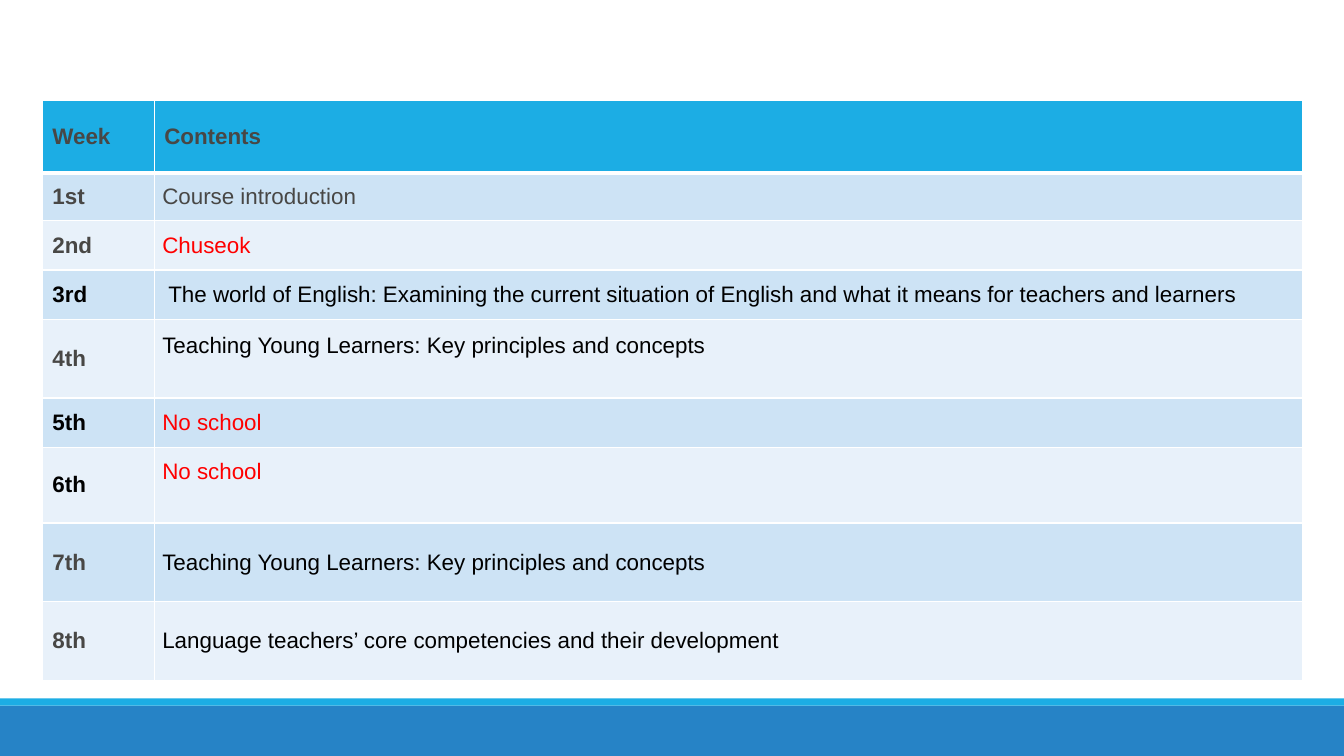
import lxml.etree
import pptx
import pptx.dml.color
import pptx.enum.shapes
import pptx.enum.text
import pptx.oxml.ns
import pptx.util

Inches = pptx.util.Inches
RGBColor = pptx.dml.color.RGBColor

WHITE = RGBColor(0xFF, 0xFF, 0xFF)
BLACK = RGBColor(0x00, 0x00, 0x00)
GREY = RGBColor(0x48, 0x47, 0x45)
RED = RGBColor(0xFF, 0x00, 0x00)
CYAN = RGBColor(0x1C, 0xAD, 0xE4)
BLUE = RGBColor(0x26, 0x83, 0xC6)
BAND_DARK = RGBColor(0xCD, 0xE3, 0xF5)
BAND_LIGHT = RGBColor(0xE8, 0xF1, 0xFA)

SLIDE_WIDTH = 13.33
COLUMN_WIDTHS = [1.11, 11.39]
KEY_PRINCIPLES = "Teaching Young Learners: Key principles and concepts"
WORLD_OF_ENGLISH = (
    "The world of English: Examining the current situation of English "
    "and what it means for teachers and learners"
)
WEEK_INSETS = {"margin_left": 0.1, "margin_right": 0.1}
CONTENT_INSETS = {"margin_left": 0.08, "margin_right": 0.08}
INDENTED = {**CONTENT_INSETS, "margin_left": 0.14}
RAISED = {**CONTENT_INSETS, "margin_bottom": 0.32}

SCHEDULE = [
    (0.72, "Week", GREY, "Contents", GREY, WEEK_INSETS),
    (0.47, "1st", GREY, "Course introduction", GREY, CONTENT_INSETS),
    (0.49, "2nd", GREY, "Chuseok", RED, CONTENT_INSETS),
    (0.49, "3rd", BLACK, WORLD_OF_ENGLISH, BLACK, INDENTED),
    (0.78, "4th", GREY, KEY_PRINCIPLES, BLACK, RAISED),
    (0.49, "5th", BLACK, "No school", RED, CONTENT_INSETS),
    (0.75, "6th", BLACK, "No school", RED, RAISED),
    (0.78, "7th", GREY, KEY_PRINCIPLES, BLACK, CONTENT_INSETS),
    (0.78, "8th", GREY, "Language teachers’ core competencies and their development",
     BLACK, CONTENT_INSETS),
]


def set_values(target, values):
    """Set each named attribute of the target."""
    for name, value in values.items():
        setattr(target, name, value)


def add_footer_band(slide, top, height, color):
    """Draw a full-width band at the foot of the slide."""
    band = slide.shapes.add_shape(
        pptx.enum.shapes.MSO_SHAPE.RECTANGLE,
        Inches(0), Inches(top), Inches(SLIDE_WIDTH), Inches(height),
    )
    band.shadow.inherit = False
    band.fill.solid()
    band.fill.fore_color.rgb = color
    band.line.fill.background()


def add_borders(cell, widths):
    """Give a cell white borders with the given widths in points."""
    qn = pptx.oxml.ns.qn
    properties = cell._tc.get_or_add_tcPr()
    for side, width in widths.items():
        border = lxml.etree.SubElement(
            properties, qn(f"a:ln{side}"), w=str(pptx.util.Pt(width))
        )
        solid = lxml.etree.SubElement(border, qn("a:solidFill"))
        lxml.etree.SubElement(solid, qn("a:srgbClr"), val=str(WHITE))


def fill_cell(cell, text, color, bold, background, insets, borders):
    """Write and format one cell of the schedule."""
    add_borders(cell, borders)
    cell.fill.solid()
    cell.fill.fore_color.rgb = background
    margins = {"margin_top": 0.06, "margin_bottom": 0.06, **insets}
    set_values(cell, {name: Inches(inset) for name, inset in margins.items()})
    cell.vertical_anchor = pptx.enum.text.MSO_ANCHOR.MIDDLE
    run = cell.text_frame.paragraphs[0].add_run()
    run.text = text
    set_values(run.font, {"name": "Arial", "size": pptx.util.Pt(16), "bold": bold})
    run.font.color.rgb = color


def add_schedule(slide):
    """Add the weekly schedule table."""
    schedule = slide.shapes.add_table(
        len(SCHEDULE), len(COLUMN_WIDTHS),
        Inches(0.42), Inches(1), Inches(12.5), Inches(5.75),
    ).table
    for column, width in zip(schedule.columns, COLUMN_WIDTHS):
        column.width = Inches(width)
    for index, entry in enumerate(SCHEDULE):
        height, week, week_color, content, content_color, insets = entry
        schedule.rows[index].height = Inches(height)
        is_header = index == 0
        band = BAND_DARK if index % 2 else BAND_LIGHT
        background = CYAN if is_header else band
        borders = {"L": 1, "R": 1, "T": 3 if index == 1 else 1, "B": 3 if is_header else 1}
        fill_cell(schedule.cell(index, 0), week, week_color, True,
                  background, WEEK_INSETS, borders)
        fill_cell(schedule.cell(index, 1), content, content_color, is_header,
                  background, insets, borders)


def main():
    """Build the course schedule slide."""
    deck = pptx.Presentation()
    set_values(deck, {"slide_width": Inches(SLIDE_WIDTH), "slide_height": Inches(7.5)})
    slide = deck.slides.add_slide(deck.slide_layouts[6])
    add_footer_band(slide, 7, 0.5, BLUE)
    add_footer_band(slide, 6.93, 0.07, CYAN)
    add_schedule(slide)
    deck.save("out.pptx")


if __name__ == "__main__":
    main()
